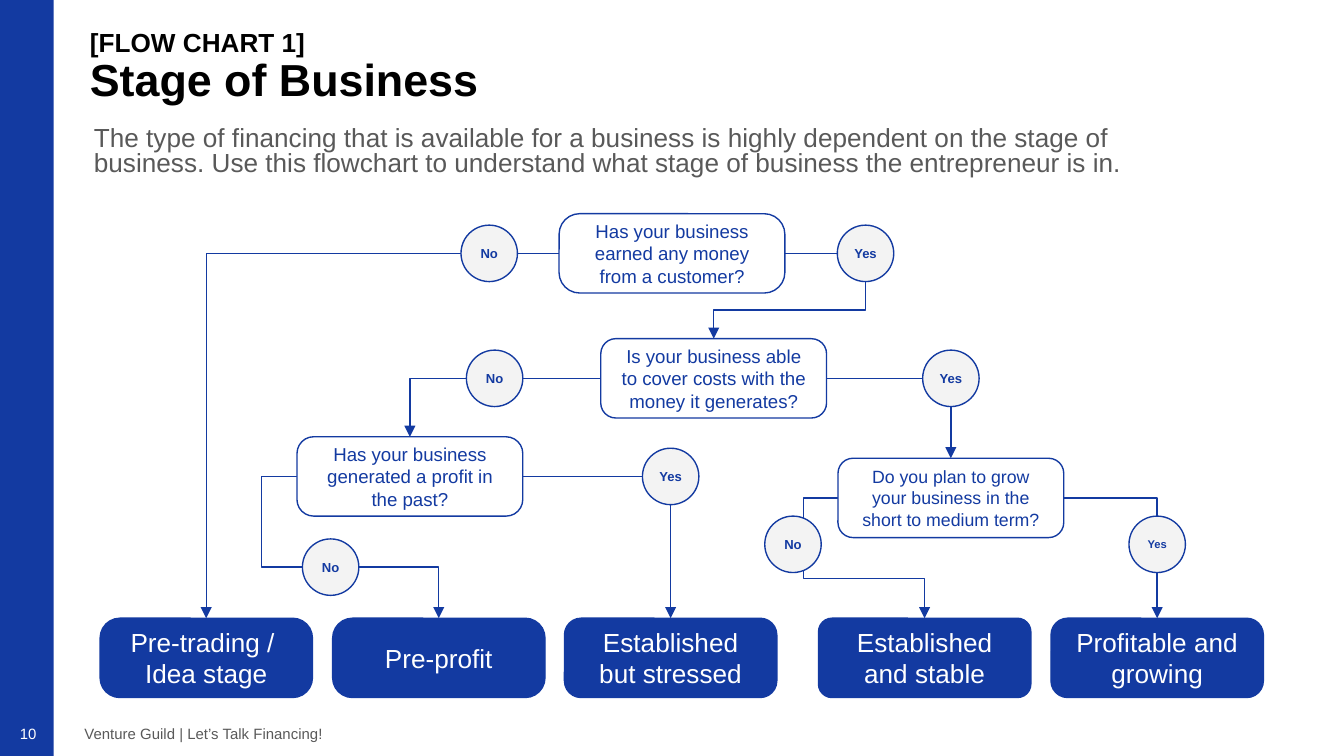
from dataclasses import dataclass

from lxml.etree import SubElement
from pptx import Presentation
from pptx.dml.color import RGBColor
from pptx.enum.shapes import MSO_CONNECTOR, MSO_SHAPE
from pptx.enum.text import MSO_ANCHOR, PP_ALIGN
from pptx.oxml.ns import qn
from pptx.util import Inches, Pt


@dataclass(frozen=True)
class Theme:
    font: str = "Arial"
    blue: str = "133AA1"
    white: str = "FFFFFF"
    black: str = "000000"
    grey: str = "595959"
    pale: str = "F3F3F3"
    title: float = 24
    lead: float = 14
    question: float = 10
    footer: float = 8
    answer: float = 7
    line: float = 0.75


@dataclass(frozen=True)
class Node:
    column: float
    row: float
    width: float
    height: float

    @property
    def left(self):
        return self.column - self.width / 2, self.row

    @property
    def right(self):
        return self.column + self.width / 2, self.row

    @property
    def top(self):
        return self.column, self.row - self.height / 2

    @property
    def bottom(self):
        return self.column, self.row + self.height / 2


THEME = Theme()
COLUMNS, ROWS = 100, 56.25
WIDTH, HEIGHT = Inches(10), Inches(5.625)
MARGIN = 1
STAGE_ROW = 48.95


def across(columns):
    return round(WIDTH * columns / COLUMNS)


def down(rows):
    return round(HEIGHT * rows / ROWS)


def color(code):
    return RGBColor.from_string(code)


def write(shape, text, sizes, ink, bold=False, align=PP_ALIGN.LEFT,
          anchor=MSO_ANCHOR.MIDDLE, margin=MARGIN, spacing=None):
    frame = shape.text_frame
    frame.text = text
    frame.word_wrap = True
    frame.vertical_anchor = anchor
    frame.margin_left = frame.margin_right = across(margin)
    frame.margin_top = frame.margin_bottom = down(margin)
    for index, para in enumerate(frame.paragraphs):
        para.alignment = align
        if spacing:
            para.line_spacing = spacing
        for span in para.runs:
            span.font.name = THEME.font
            span.font.size = Pt(sizes[min(index, len(sizes) - 1)])
            span.font.bold = bold
            span.font.color.rgb = color(ink)


def add_text(page, left, top, width, height, text, sizes, ink, **style):
    box = page.shapes.add_textbox(across(left), down(top), across(width), down(height))
    write(box, text, sizes, ink, **style)


def add_node(page, node, kind, fill, text, size, ink, corner=None, **style):
    shape = page.shapes.add_shape(kind, across(node.left[0]), down(node.top[1]),
                                  across(node.width), down(node.height))
    shape.shadow.inherit = False
    shape.fill.solid()
    shape.fill.fore_color.rgb = color(fill)
    shape.line.color.rgb = color(THEME.blue)
    shape.line.width = Pt(THEME.line)
    if corner is not None:
        shape.adjustments[0] = corner
    write(shape, text, [size], ink, align=PP_ALIGN.CENTER, **style)


def add_question(page, node, text, corner, size=THEME.question):
    add_node(page, node, MSO_SHAPE.ROUNDED_RECTANGLE, THEME.white, text, size,
             THEME.blue, corner)


def add_answer(page, node, text, size=THEME.answer):
    add_node(page, node, MSO_SHAPE.OVAL, THEME.pale, text, size, THEME.blue,
             bold=True, margin=0)


def add_stage(page, node, text, corner):
    add_node(page, node, MSO_SHAPE.ROUNDED_RECTANGLE, THEME.blue, text, THEME.lead,
             THEME.white, corner)


def add_link(page, start, end, preset="line", bends=(), arrow=True, turned=False):
    (x1, y1), (x2, y2) = start, end
    if turned:
        middle_x, middle_y = (x1 + x2) / 2, (y1 + y2) / 2
        half_width, half_height = abs(y2 - y1) / 2, abs(x2 - x1) / 2
        x1, x2 = middle_x - half_width, middle_x + half_width
        y1, y2 = middle_y - half_height, middle_y + half_height
    link = page.shapes.add_connector(MSO_CONNECTOR.STRAIGHT, across(x1), down(y1),
                                     across(x2), down(y2))
    link.line.color.rgb = color(THEME.blue)
    link.line.width = Pt(THEME.line)
    properties = link._element.spPr
    if turned:
        properties.find(qn("a:xfrm")).set("rot", str(90 * 60000))
    geometry = properties.find(qn("a:prstGeom"))
    geometry.set("prst", preset)
    guides = geometry.find(qn("a:avLst"))
    for number, bend in enumerate(bends, 1):
        SubElement(guides, qn("a:gd"), name=f"adj{number}",
                   fmla=f"val {round(bend * 100000)}")
    if arrow:
        SubElement(properties.find(qn("a:ln")), qn("a:tailEnd"), type="triangle")
    SubElement(properties, qn("a:effectLst"))


def question_at(column, row):
    return Node(column, row, 16.8, 5.9)


def answer_at(column, row):
    return Node(column, row, 4.2, 4.2)


def stage_at(column):
    return Node(column, STAGE_ROW, 15.8, 5.9)


def add_frame(page):
    bar = page.shapes.add_shape(MSO_SHAPE.RECTANGLE, 0, 0, across(4), HEIGHT)
    bar.shadow.inherit = False
    bar.fill.solid()
    bar.fill.fore_color.rgb = color(THEME.blue)
    bar.line.fill.background()
    add_text(page, 5.7, 1.2, 69.8, 7.9, "[FLOW CHART 1]\nStage of Business",
             [THEME.lead, THEME.title], THEME.black, bold=True,
             anchor=MSO_ANCHOR.TOP, spacing=0.9)
    add_text(page, 6, 8.5, 82.8, 4.6,
             "The type of financing that is available for a business is highly "
             "dependent on the stage of business. Use this flowchart to understand "
             "what stage of business the entrepreneur is in.",
             [THEME.lead], THEME.grey, anchor=MSO_ANCHOR.TOP, spacing=0.8)
    add_text(page, 0.5, 52.4, 6, 4.3, "10", [THEME.footer], THEME.white)
    add_text(page, 5.3, 52.4, 27.4, 4.3, "Venture Guild | Let’s Talk Financing!",
             [THEME.footer], THEME.grey)


def add_flow(page):
    earned, covers = question_at(50, 18.85), question_at(53.1, 28.15)
    profit, growth = question_at(30.5, 35.45), question_at(70.75, 37.05)
    earned_yes, covers_yes = answer_at(64.4, 18.85), answer_at(70.75, 28.15)
    idea, unprofitable, stressed, stable, growing = map(
        stage_at, (15.35, 32.65, 49.9, 68.8, 86.1))

    add_link(page, earned.left, idea.top, "bentConnector2")
    add_link(page, earned.right, earned_yes.left, arrow=False)
    add_link(page, earned_yes.bottom, covers.top, "bentConnector3", [0.5], turned=True)
    add_link(page, covers.left, profit.top, "bentConnector2")
    add_link(page, covers.right, covers_yes.left, arrow=False)
    add_link(page, covers_yes.bottom, growth.top)
    add_link(page, profit.left, unprofitable.top, "bentConnector4", [-0.25, 0.64])
    add_link(page, profit.right, stressed.top, "bentConnector2")
    add_link(page, growth.left, stable.top, "bentConnector4", [-0.4, 0.67])
    add_link(page, growth.right, growing.top, "bentConnector2")

    add_question(page, earned, "Has your business earned any money from a customer?", 0.26)
    add_question(page, covers,
                 "Is your business able to cover costs with the money it generates?", 0.19)
    add_question(page, profit, "Has your business generated a profit in the past?", 0.21)
    add_question(page, growth,
                 "Do you plan to grow your business in the short to medium term?",
                 0.19, 9.5)

    for column, row in ((36.4, 18.85), (36.8, 28.15), (24.6, 42.2), (59, 40.5)):
        add_answer(page, answer_at(column, row), "No")
    for node in (earned_yes, covers_yes, answer_at(49.9, 35.45)):
        add_answer(page, node, "Yes")
    add_answer(page, answer_at(86.1, 40.5), "Yes", 6)

    add_stage(page, idea, "Pre-trading / \nIdea stage", 0.25)
    add_stage(page, unprofitable, "Pre-profit", 0.25)
    add_stage(page, stressed, "Established but stressed", 0.21)
    add_stage(page, stable, "Established and stable", 0.17)
    add_stage(page, growing, "Profitable and growing", 0.21)


def main():
    deck = Presentation()
    deck.slide_width, deck.slide_height = WIDTH, HEIGHT
    page = deck.slides.add_slide(deck.slide_layouts[6])
    add_frame(page)
    add_flow(page)
    deck.save("out.pptx")


if __name__ == "__main__":
    main()
